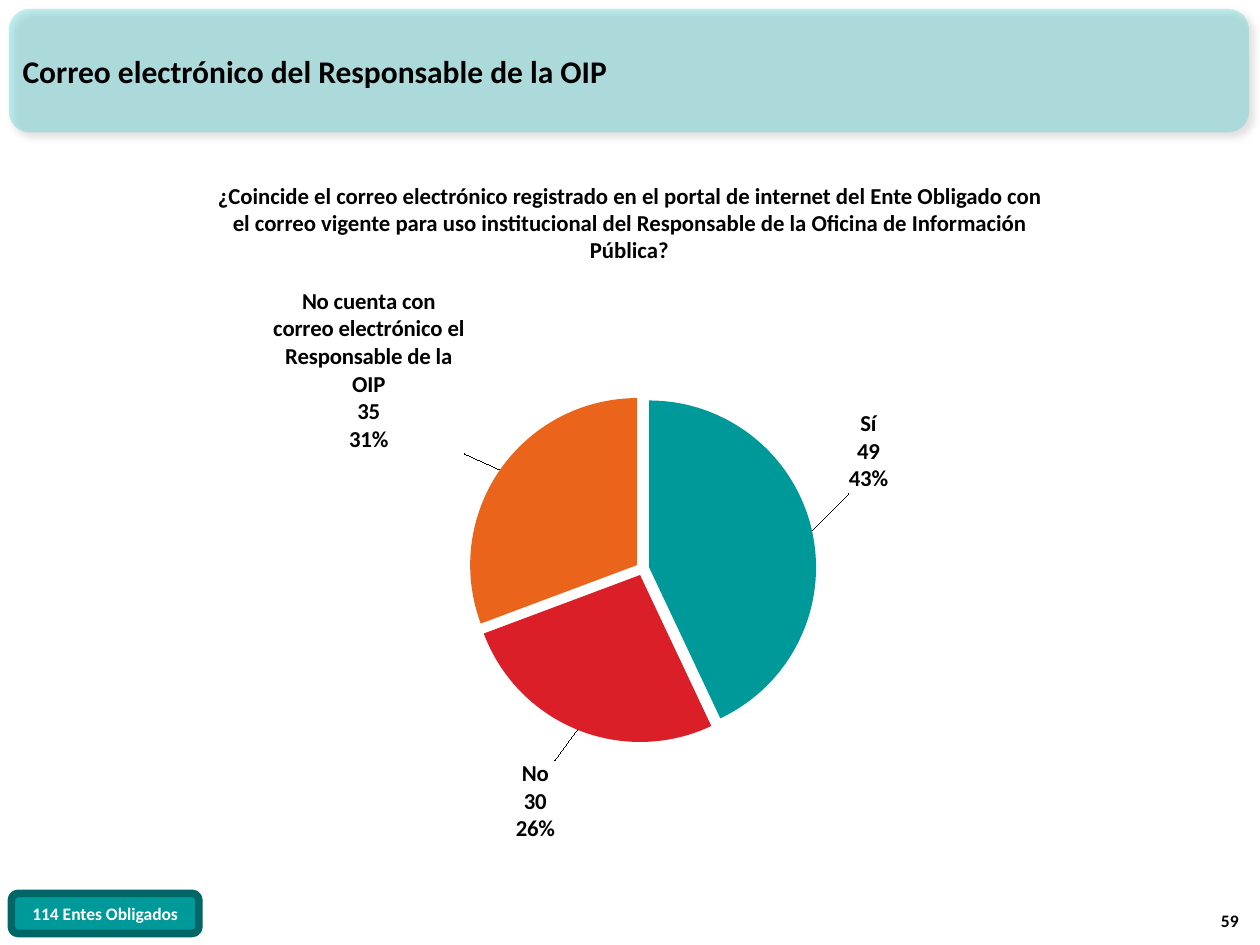
from dataclasses import dataclass

import pptx
import pptx.chart.data
import pptx.dml.color
import pptx.enum.chart
import pptx.enum.shapes
import pptx.enum.text
import pptx.oxml
import pptx.oxml.ns
import pptx.util
from lxml import etree
from pptx.util import Cm

ALIGN = pptx.enum.text.PP_ALIGN
ANCHOR = pptx.enum.text.MSO_ANCHOR
ROUNDED = pptx.enum.shapes.MSO_SHAPE.ROUNDED_RECTANGLE


@dataclass(frozen=True)
class Theme:
    font: str = "Calibri"
    text: str = "000000"
    light: str = "FFFFFF"
    header: str = "33CCCC"
    teal: str = "009999"
    dark_teal: str = "006666"
    red: str = "DA1F28"
    orange: str = "EB641B"
    title_size: float = 18
    body_size: float = 13
    small_size: float = 10


THEME = Theme()


def rgb(value):
    return pptx.dml.color.RGBColor.from_string(value)


def style_font(font, size, color=THEME.text):
    font.name = THEME.font
    font.size = pptx.util.Pt(size)
    font.bold = True
    font.color.rgb = rgb(color)


def write_text(shape, text, size, align, anchor, color=THEME.text):
    frame = shape.text_frame
    frame.word_wrap = True
    frame.auto_size = pptx.enum.text.MSO_AUTO_SIZE.NONE
    frame.vertical_anchor = anchor
    paragraph = frame.paragraphs[0]
    paragraph.alignment = align
    run = paragraph.add_run()
    run.text = text
    style_font(run.font, size, color)


def add_label(slide, box, text, size, align, anchor):
    shape = slide.shapes.add_textbox(*box)
    write_text(shape, text, size, align, anchor)


def add_panel(slide, box, color):
    shape = slide.shapes.add_shape(ROUNDED, *box)
    shape.shadow.inherit = False
    shape.fill.solid()
    shape.fill.fore_color.rgb = rgb(color)
    shape.line.fill.background()
    return shape


def add_header(slide):
    header = add_panel(slide, (Cm(0.18), Cm(0.18), Cm(25), Cm(2.49)), THEME.header)
    # Translucent fill and soft drop shadow
    color = header.fill._xPr.find(".//" + pptx.oxml.ns.qn("a:srgbClr"))
    etree.SubElement(color, pptx.oxml.ns.qn("a:alpha"), val="30000")
    effects = header._element.spPr.find(pptx.oxml.ns.qn("a:effectLst"))
    effects.append(pptx.oxml.parse_xml(
        f'<a:outerShdw {pptx.oxml.ns.nsdecls("a")} blurRad="50800" dist="38100" '
        'dir="2700000" algn="tl" rotWithShape="0"><a:srgbClr val="000000">'
        '<a:alpha val="40000"/></a:srgbClr></a:outerShdw>'))
    # Behind the title
    slide.shapes._spTree.insert(2, header._element)


def add_title(slide, text):
    title = slide.shapes.title
    title.left, title.top, title.width, title.height = Cm(0.2), Cm(0.23), Cm(23.6), Cm(2.39)
    write_text(title, text, THEME.title_size, ALIGN.LEFT, ANCHOR.MIDDLE)


def add_badge(slide, text):
    badge = add_panel(slide, (Cm(0.23), Cm(18.01), Cm(3.78), Cm(0.81)), THEME.teal)
    badge.line.color.rgb = rgb(THEME.dark_teal)
    badge.line.width = pptx.util.Pt(4.33)
    write_text(badge, text, THEME.small_size, ALIGN.CENTER, ANCHOR.MIDDLE, THEME.light)


def manual_layout(**values):
    items = "".join(f'<c:{name} val="{value}"/>' for name, value in values.items())
    return pptx.oxml.parse_xml(
        f'<c:layout {pptx.oxml.ns.nsdecls("c")}><c:manualLayout>{items}'
        "</c:manualLayout></c:layout>")


def show_labels(labels):
    """Category, value and percentage, one per line, with leader lines."""
    labels.show_category_name = True
    labels.show_value = True
    labels.show_percentage = True
    labels.position = pptx.enum.chart.XL_LABEL_POSITION.OUTSIDE_END
    style_font(labels.font, THEME.body_size)
    element = labels._element
    leader = element.find(pptx.oxml.ns.qn("c:showLeaderLines"))
    if leader is None:
        leader = etree.SubElement(element, pptx.oxml.ns.qn("c:showLeaderLines"))
    leader.set("val", "1")
    separator = etree.Element(pptx.oxml.ns.qn("c:separator"))
    separator.text = "\n"
    leader.addprevious(separator)


def place_label(point, x, y):
    """Shift one label from its default place, in fractions of the chart."""
    point.data_label.position = pptx.enum.chart.XL_LABEL_POSITION.OUTSIDE_END
    label = point.data_label._dLbl
    label.find(pptx.oxml.ns.qn("c:idx")).addnext(manual_layout(x=x, y=y))
    for name in ("showCatName", "showVal", "showPercent"):
        label.find(pptx.oxml.ns.qn("c:" + name)).set("val", "1")
    separator = etree.SubElement(label, pptx.oxml.ns.qn("c:separator"))
    separator.text = "\n"


def add_pie(slide, slices):
    data = pptx.chart.data.CategoryChartData()
    data.categories = [name for name, *_ in slices]
    data.add_series("Series 1", [value for _, value, *_ in slices])
    chart = slide.shapes.add_chart(
        pptx.enum.chart.XL_CHART_TYPE.PIE,
        Cm(2.72), Cm(5.72), Cm(19.99), Cm(12.09), data).chart
    chart.has_legend = False
    chart.has_title = False
    style_font(chart.font, THEME.body_size)

    # Plot area
    area = chart._chartSpace.find(".//" + pptx.oxml.ns.qn("c:plotArea"))
    for old in area.findall(pptx.oxml.ns.qn("c:layout")):
        area.remove(old)
    area.insert(0, manual_layout(layoutTarget="inner", xMode="edge", yMode="edge",
                                 x=0.224, y=0.186, w=0.576, h=0.579))

    # Slices and their labels
    plot = chart.plots[0]
    plot.vary_by_categories = True
    series = plot.series[0]
    show_labels(series.data_labels)
    for index, (_, _, color, shift) in enumerate(slices):
        point = series.points[index]
        point.format.fill.solid()
        point.format.fill.fore_color.rgb = rgb(color)
        place_label(point, *shift)
    explosion = etree.Element(pptx.oxml.ns.qn("c:explosion"), val="4")
    series._element.find(pptx.oxml.ns.qn("c:dPt")).addprevious(explosion)
    for element in series._element.findall(pptx.oxml.ns.qn("c:dPt")):
        fill = element.find(pptx.oxml.ns.qn("c:spPr"))
        fill.addprevious(etree.Element(pptx.oxml.ns.qn("c:explosion"), val="4"))


def main():
    presentation = pptx.Presentation()
    presentation.slide_width, presentation.slide_height = Cm(25.4), Cm(19.05)
    slide = presentation.slides.add_slide(presentation.slide_layouts[5])

    # Header
    add_header(slide)
    add_title(slide, "Correo electrónico del Responsable de la OIP")

    # Question and chart
    add_label(slide, (Cm(4.06), Cm(3.53), Cm(17.25), Cm(1.93)),
              "¿Coincide el correo electrónico registrado en el portal de internet del "
              "Ente Obligado con el correo vigente para uso institucional del Responsable "
              "de la Oficina de Información Pública?",
              THEME.body_size, ALIGN.CENTER, ANCHOR.TOP)
    add_pie(slide, [
        ("Sí", 49, THEME.teal, (0.03, -0.06)),
        ("No", 30, THEME.red, (-0.02, 0.04)),
        ("No cuenta con correo electrónico el Responsable de la OIP", 35,
         THEME.orange, (-0.03, -0.02)),
    ])

    # Footer
    add_badge(slide, "114 Entes Obligados")
    add_label(slide, (Cm(24), Cm(17.88), Cm(1.22), Cm(1.02)), "59",
              THEME.small_size, ALIGN.RIGHT, ANCHOR.BOTTOM)

    presentation.save("out.pptx")


if __name__ == "__main__":
    main()
